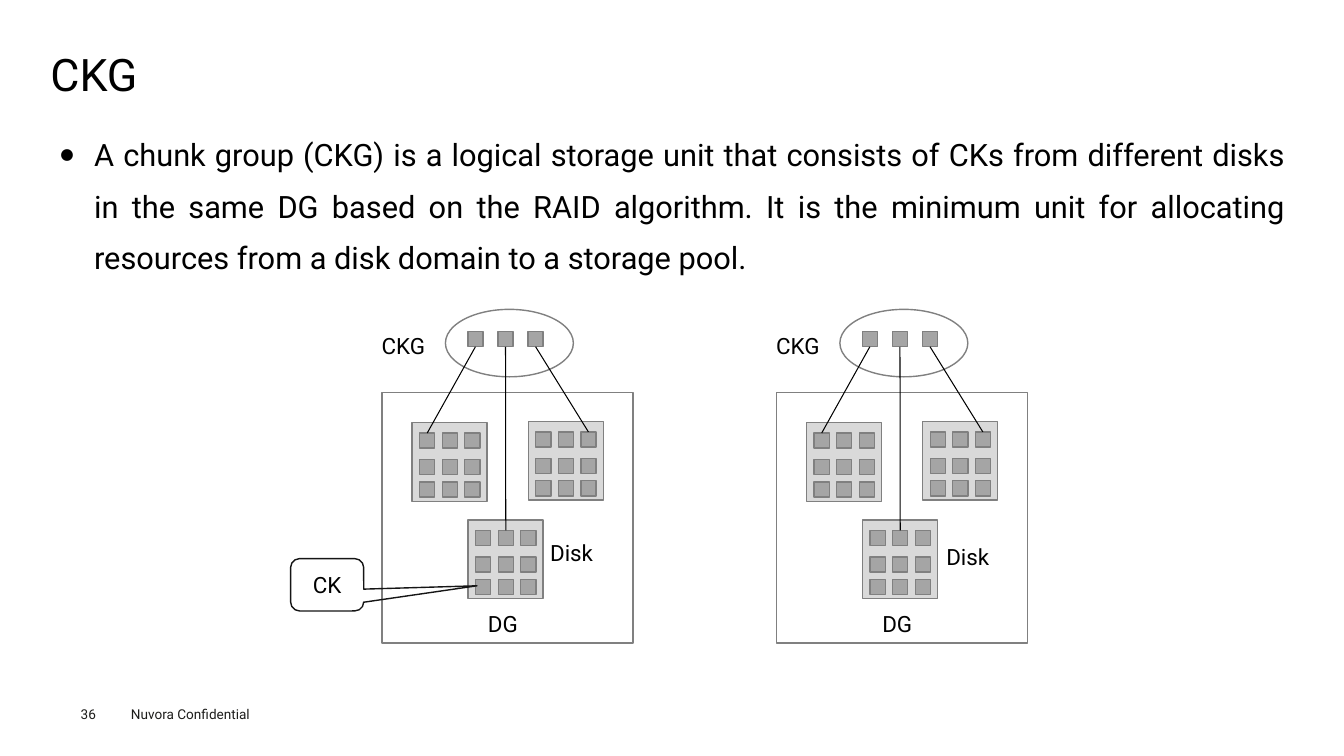
from itertools import product
from lxml import etree
from pptx import Presentation
from pptx.dml.color import RGBColor
from pptx.enum.shapes import MSO_CONNECTOR as Connector, MSO_SHAPE as Preset
from pptx.enum.text import MSO_ANCHOR as Anchor, MSO_AUTO_SIZE as AutoSize, PP_ALIGN as Align
from pptx.oxml.ns import qn
from pptx.util import Pt

# Content
TITLE = "CKG"
BODY = ("A chunk group (CKG) is a logical storage unit that consists of CKs from "
        "different disks in the same DG based on the RAID algorithm. It is the minimum "
        "unit for allocating resources from a disk domain to a storage pool.")
FOOTER = [("Nuvora Confidential", 86.4, 500.4, 115, 19.4, 7.2, 3.6),
          ("36", 57.6, 504, 39.6, 11.5, 0, 0)]

# Format and geometry, in points
FONT = "Roboto"
COLORS = {"text": "000000", "footer": "1D1D1B", "outline": "808080",
          "disk": "D9D9D9", "chunk": "A5A5A5", "callout": "151515"}
GROUP_LEFTS = [273, 554.75]
DISK_LABEL_PLACES = [(385.9, 381.6), (668.9, 384.5)]
FRAME_TOP, FRAME_SIZE = 280.2, 179.2
DISK_WIDTH, DISK_HEIGHT = 53.6, 56.3
CHUNK = 10.8
CHUNK_COLUMNS = [5.4 + 16.1 * column for column in range(3)]
CHUNK_ROWS = [7.5, 26.5, 42.4]
CKG_CHUNK_LEFT, CKG_CHUNK_STEP, CKG_CHUNK_TOP = 61.2, 21.5, 236.9
# Disk offset from the group's left, disk top, column of the chunk joined to the CKG
DISKS = [(21.4, 301.8, 0), (61.4, 371.4, 1), (104.3, 301, 2)]


def rgb(name):
    return RGBColor.from_string(COLORS[name])


def set_all(target, values):
    for name, value in values.items():
        setattr(target, name, value)


def place(shape, left, top, width, height):
    set_all(shape, {"left": Pt(left), "top": Pt(top),
                    "width": Pt(width), "height": Pt(height)})


def write(shape, text, size, color="text", inset=(7.2, 3.6), wrap=True,
          anchor=Anchor.TOP, bullet=None, **paragraph_format):
    frame = shape.text_frame
    across, down = map(Pt, inset)
    set_all(frame, {"text": text, "auto_size": AutoSize.NONE, "word_wrap": wrap,
                    "vertical_anchor": anchor, "margin_left": across,
                    "margin_right": across, "margin_top": down, "margin_bottom": down})
    paragraph = frame.paragraphs[0]
    if bullet:
        properties = paragraph._p.get_or_add_pPr()
        properties.set("marL", str(Pt(24)))
        properties.set("indent", str(-Pt(24)))
        for tag, name, value in [("a:buSzPct", "val", "50000"),
                                 ("a:buFont", "typeface", FONT),
                                 ("a:buChar", "char", bullet)]:
            etree.SubElement(properties, qn(tag)).set(name, value)
    set_all(paragraph, {"space_before": Pt(0), **paragraph_format})
    set_all(paragraph.runs[0].font, {"name": FONT, "size": Pt(size)})
    paragraph.runs[0].font.color.rgb = rgb(color)


def add_label(shapes, text, left, top, width, height=26.6, **text_format):
    box = shapes.add_textbox(Pt(left), Pt(top), Pt(width), Pt(height))
    write(box, text, **{"size": 16, "wrap": False, **text_format})


def add_outline(shapes, preset, left, top, width, height, fill=None, line="outline"):
    shape = shapes.add_shape(preset, Pt(left), Pt(top), Pt(width), Pt(height))
    shape.shadow.inherit = False
    if fill:
        shape.fill.solid()
        shape.fill.fore_color.rgb = rgb(fill)
    else:
        shape.fill.background()
    shape.line.color.rgb = rgb(line)
    shape.line.width = Pt(1)
    return shape


def add_chunk(shapes, left, top):
    add_outline(shapes, Preset.RECTANGLE, left, top, CHUNK, CHUNK, "chunk")


def add_line(shapes, *ends):
    line = shapes.add_connector(Connector.STRAIGHT, *map(Pt, ends))
    line.line.color.rgb = rgb("text")
    line.line.width = Pt(0.75)
    etree.SubElement(line._element.spPr, qn("a:effectLst"))


def add_disk_group(slide, left):
    shapes = slide.shapes.add_group_shape().shapes
    add_outline(shapes, Preset.RECTANGLE, left, FRAME_TOP, FRAME_SIZE, FRAME_SIZE)
    add_label(shapes, "DG", left + 68.4, 432, 37.4)
    add_outline(shapes, Preset.OVAL, left + 45.2, 221, 91.4, 48.2)
    add_label(shapes, "CKG", left - 7.4, 234, 45.4)
    for index, (offset, top, column) in enumerate(DISKS):
        disk_left = left + offset
        add_outline(shapes, Preset.RECTANGLE, disk_left, top,
                    DISK_WIDTH, DISK_HEIGHT, "disk")
        for y, x in product(CHUNK_ROWS, CHUNK_COLUMNS):
            add_chunk(shapes, disk_left + x, top + y)
        # Chunk in the CKG, joined to its chunk on the disk
        ckg_left = left + CKG_CHUNK_LEFT + CKG_CHUNK_STEP * index
        add_chunk(shapes, ckg_left, CKG_CHUNK_TOP)
        add_line(shapes, ckg_left + CHUNK / 2, CKG_CHUNK_TOP + CHUNK,
                 disk_left + CHUNK_COLUMNS[column] + CHUNK / 2, top + CHUNK_ROWS[0])


def main():
    presentation = Presentation()
    set_all(presentation, {"slide_width": Pt(960), "slide_height": Pt(540)})
    slide = presentation.slides.add_slide(presentation.slide_layouts[1])

    # Title, body and footer
    title, body = slide.placeholders
    place(title, 36, 35.3, 889.2, 38.9)
    write(title, TITLE, 32, inset=(0, 0), anchor=Anchor.MIDDLE,
          alignment=Align.LEFT, line_spacing=0.9)
    place(body, 36, 82.8, 889.2, 383.8)
    write(body, BODY, 22, bullet="●", alignment=Align.JUSTIFY, line_spacing=1.4)
    for text, left, top, width, height, across, down in FOOTER:
        add_label(slide.shapes, text, left, top, width, height, size=9.7,
                  color="footer", inset=(across, down), wrap=True)

    # Two disk groups, each with its chunk group
    for left, label_place in zip(GROUP_LEFTS, DISK_LABEL_PLACES):
        add_disk_group(slide, left)
        add_label(slide.shapes, "Disk", *label_place, 46.1)

    # Callout pointing at one chunk
    callout = add_outline(slide.shapes, Preset.ROUNDED_RECTANGULAR_CALLOUT,
                          207.6, 399, 52.2, 37.4, line="callout")
    for index, value in enumerate([2.05, 0.02, 0.17]):
        callout.adjustments[index] = value
    write(callout, "CK", 16, anchor=Anchor.MIDDLE, alignment=Align.CENTER)

    presentation.save("out.pptx")


if __name__ == "__main__":
    main()
